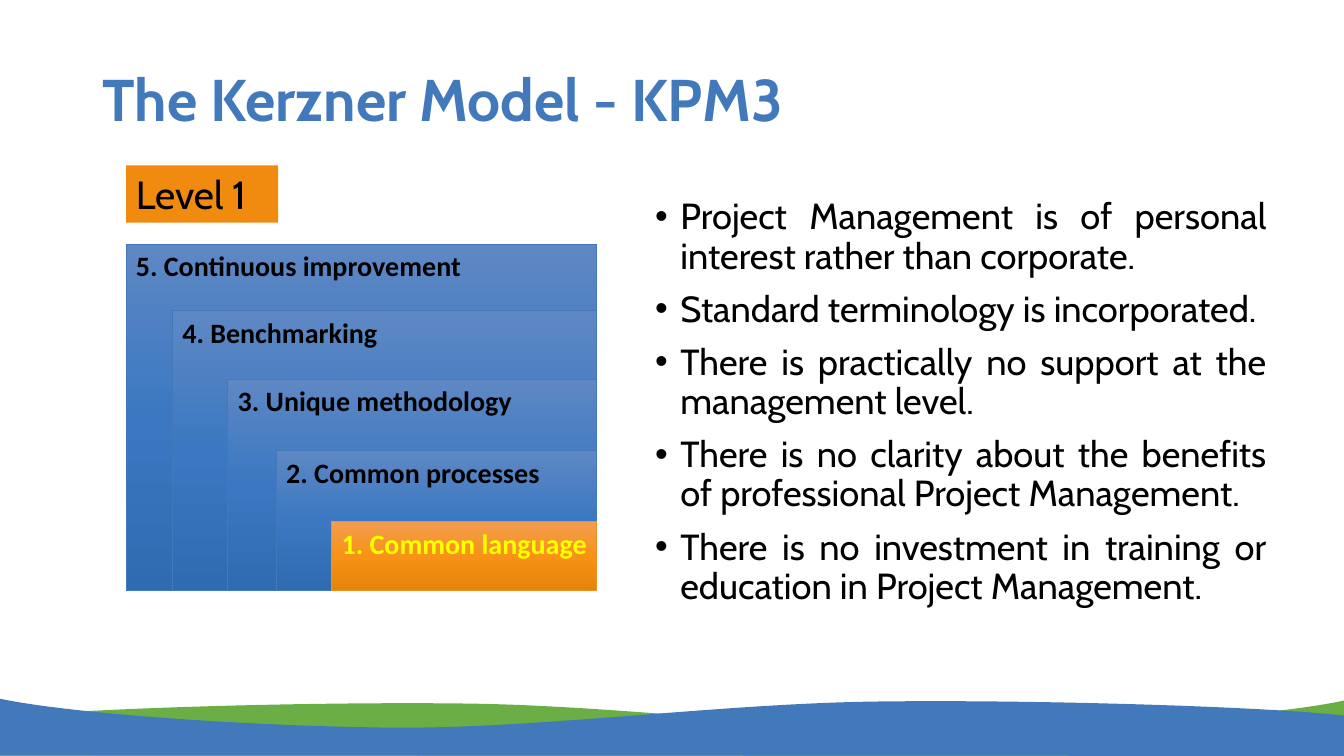
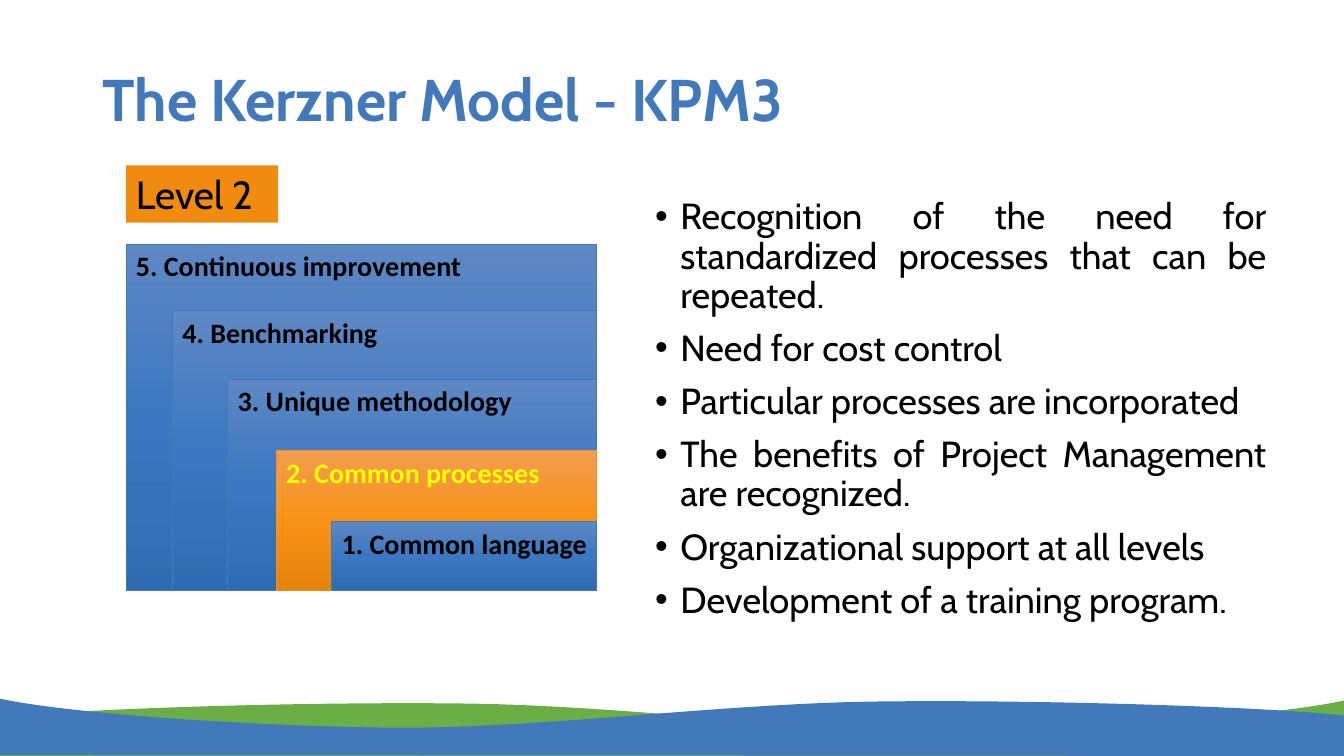
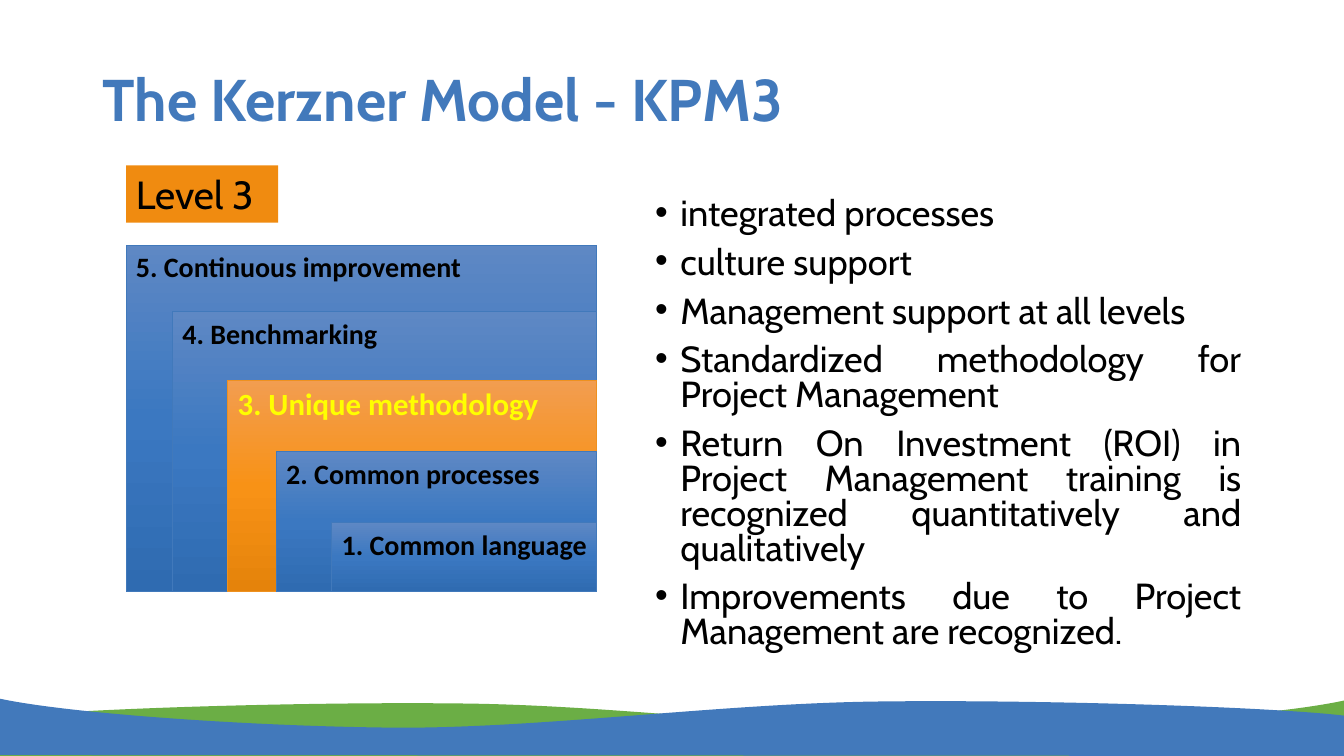
from copy import deepcopy
from dataclasses import dataclass

from lxml import etree
from pptx import Presentation
from pptx.dml.color import RGBColor
from pptx.enum.shapes import MSO_SHAPE
from pptx.enum.text import MSO_ANCHOR, MSO_AUTO_SIZE, PP_ALIGN
from pptx.oxml.ns import qn
from pptx.util import Inches, Pt

RECTANGLE = MSO_SHAPE.RECTANGLE
TOP, MIDDLE = MSO_ANCHOR.TOP, MSO_ANCHOR.MIDDLE
LEFT, JUSTIFY = PP_ALIGN.LEFT, PP_ALIGN.JUSTIFY
FIT_SHAPE = MSO_AUTO_SIZE.SHAPE_TO_FIT_TEXT

COLOURS = {
    "blue": "4279BB",
    "green": "6BAE45",
    "orange": "F08B10",
    "black": "000000",
    "yellow": "FFFF00",
    "plain line": "4179BB",
    "plain top": "5E88C4",
    "plain middle": "3B78C1",
    "plain bottom": "2F6BB1",
    "highlight line": "EE9120",
    "highlight top": "F29D50",
    "highlight middle": "F89216",
    "highlight bottom": "E5830B",
}
HEADING_FONT = "Cabin"
LEVEL_FONT = "Calibri"
TITLE = "The Kerzner Model - KPM3"

LEVELS_RIGHT = 5.92
LEVELS_BOTTOM = 5.86

Point = tuple[float, float]


@dataclass(frozen=True)
class Wave:
    """A crest of cubic curves (three points each), closed by a curve and a line."""
    colour: str
    start: Point
    crest: list[Point]
    first_side: list[Point]
    base_end: Point
    last_side: list[Point]


@dataclass(frozen=True)
class Level:
    number: int
    name: str
    left: float
    top: float


@dataclass(frozen=True)
class LevelStyle:
    name: str
    text: str


@dataclass(frozen=True)
class LevelPage:
    number: int
    points: list[str]
    body_width: float = 6.26
    line_spacing: float = 0.9
    highlight_size: int = 20
    levels_shift: float = 0.0


WAVES = [
    Wave("green", (-0.01, 7.12), [
        (0.76, 7.03), (3.06, 6.96), (4.62, 6.98),
        (6.18, 7.0), (7.89, 7.24), (9.35, 7.24),
        (10.8, 7.23), (12.65, 7.1), (13.33, 6.95),
    ], [(13.33, 7.19), (13.33, 7.27), (13.34, 7.5)],
        (0, 7.52), [(-0.01, 7.27), (-0.01, 7.26), (-0.01, 7.12)]),
    Wave("blue", (13.33, 7.1), [
        (12.56, 7.01), (10.26, 6.94), (8.7, 6.96),
        (7.15, 6.98), (5.43, 7.22), (3.98, 7.22),
        (2.53, 7.21), (0.68, 7.08), (-0.01, 6.93),
    ], [(-0.01, 7.17), (-0.01, 7.26), (-0.01, 7.49)],
        (13.33, 7.5), [(13.33, 7.25), (13.33, 7.24), (13.33, 7.1)]),
]

LEVELS = [
    Level(5, "Continuous improvement", 1.25, 2.42),
    Level(4, "Benchmarking", 1.71, 3.08),
    Level(3, "Unique methodology", 2.26, 3.76),
    Level(2, "Common processes", 2.74, 4.47),
    Level(1, "Common language", 3.29, 5.17),
]

PLAIN = LevelStyle("plain", COLOURS["black"])
HIGHLIGHT = LevelStyle("highlight", COLOURS["yellow"])

PAGES = [
    LevelPage(1, [
        "Project Management is of personal interest rather than corporate.",
        "Standard terminology is incorporated.",
        "There is practically no support at the management level.",
        "There is no clarity about the benefits of professional Project Management.",
        "There is no investment in training or education in Project Management.",
    ]),
    LevelPage(2, [
        "Recognition of the need for standardized processes that can be repeated.",
        "Need for cost control",
        "Particular processes are incorporated",
        "The benefits of Project Management are recognized.",
        "Organizational support at all levels",
        "Development of a training program.",
    ]),
    LevelPage(3, [
        "integrated processes",
        "culture support",
        "Management support at all levels",
        "Standardized methodology for Project Management",
        "Return On Investment (ROI) in Project Management training is recognized "
        "quantitatively and qualitatively",
        "Improvements due to Project Management are recognized.",
    ], body_width=6.01, line_spacing=0.8, highlight_size=22, levels_shift=0.01),
]


def rgb(value: str) -> RGBColor:
    return RGBColor.from_string(value)


def style_paragraph(para, text: str, font: str, size: float, colour: str,
                    bold: bool = False, align=LEFT) -> None:
    para.text = text
    para.alignment = align
    para.font.name = font
    para.font.size = Pt(size)
    para.font.bold = bold
    para.font.color.rgb = rgb(colour)


def bend_segments(segments: list) -> None:
    """Turn each three straight segments into one cubic curve."""
    for index in range(0, len(segments), 3):
        group = segments[index:index + 3]
        curve = etree.Element(qn("a:cubicBezTo"))
        group[0].addprevious(curve)
        for segment in group:
            curve.append(segment[0])
            segment.getparent().remove(segment)


def draw_wave(page, wave: Wave) -> None:
    before_base = wave.crest + wave.first_side
    outline = [wave.start, *before_base, wave.base_end, *wave.last_side]
    vertices = [(Inches(x), Inches(y)) for x, y in outline]
    builder = page.shapes.build_freeform(*vertices[0])
    builder.add_line_segments(vertices[1:], close=True)
    shape = builder.convert_to_shape()
    segments = list(shape._element.iter(qn("a:lnTo")))
    base = len(before_base)
    bend_segments(segments[:base])
    bend_segments(segments[base + 1:base + 1 + len(wave.last_side)])
    shape.shadow.inherit = False
    shape.fill.solid()
    shape.fill.fore_color.rgb = rgb(COLOURS[wave.colour])
    shape.line.fill.background()


def draw_title(page) -> None:
    box = page.shapes.add_textbox(Inches(0.92), Inches(0.29), Inches(11.5), Inches(1.45))
    box.text_frame.word_wrap = True
    box.text_frame.vertical_anchor = MIDDLE
    para = box.text_frame.paragraphs[0]
    style_paragraph(para, TITLE, HEADING_FONT, 42, COLOURS["blue"], bold=True)
    para.line_spacing = 0.9


def add_bullet(para) -> None:
    properties = para._p.get_or_add_pPr()
    properties.set("marL", str(Inches(0.25)))
    properties.set("indent", str(-Inches(0.25)))
    run_defaults = properties.find(qn("a:defRPr"))
    run_defaults.addprevious(etree.Element(qn("a:buFont"), typeface="Arial"))
    run_defaults.addprevious(etree.Element(qn("a:buChar"), char="•"))


def draw_body(page, content: LevelPage) -> None:
    box = page.shapes.add_textbox(Inches(6.4), Inches(1.92),
                                  Inches(content.body_width), Inches(4.89))
    frame = box.text_frame
    frame.word_wrap = True
    for index, point in enumerate(content.points):
        para = frame.add_paragraph() if index else frame.paragraphs[0]
        style_paragraph(para, point, HEADING_FONT, 25.9, COLOURS["black"], align=JUSTIFY)
        para.line_spacing = content.line_spacing
        para.space_before = Pt(10)
        add_bullet(para)


def add_rectangle(page, left: float, top: float, width: float, height: float):
    shape = page.shapes.add_shape(RECTANGLE, Inches(left), Inches(top),
                                  Inches(width), Inches(height))
    shape.shadow.inherit = False
    shape.text_frame.word_wrap = True
    shape.text_frame.vertical_anchor = TOP
    return shape


def draw_level_tag(page, number: int) -> None:
    tag = add_rectangle(page, 1.25, 1.64, 1.51, 0.57)
    tag.fill.solid()
    tag.fill.fore_color.rgb = rgb(COLOURS["orange"])
    tag.line.fill.background()
    tag.text_frame.auto_size = FIT_SHAPE
    style_paragraph(tag.text_frame.paragraphs[0], f"Level {number}",
                    HEADING_FONT, 28, COLOURS["black"])


def fill_gradient(shape, style_name: str) -> None:
    """Fill from top to bottom with the style's three evenly spaced colours."""
    shape.fill.gradient()
    shape.fill.gradient_angle = 270
    stop_list = shape._element.spPr.find(qn("a:gradFill")).find(qn("a:gsLst"))
    stop_list.append(deepcopy(stop_list[-1]))
    parts = ("top", "middle", "bottom")
    for index, (stop, part) in enumerate(zip(shape.fill.gradient_stops, parts)):
        stop.color.rgb = rgb(COLOURS[f"{style_name} {part}"])
        stop.position = index / 2


def draw_level(page, level: Level, style: LevelStyle, size: int, shift: float) -> None:
    shape = add_rectangle(page, level.left, level.top + shift,
                          LEVELS_RIGHT - level.left, LEVELS_BOTTOM - level.top)
    fill_gradient(shape, style.name)
    shape.line.color.rgb = rgb(COLOURS[f"{style.name} line"])
    shape.line.width = Pt(0.5)
    style_paragraph(shape.text_frame.paragraphs[0], f"{level.number}. {level.name}",
                    LEVEL_FONT, size, style.text, bold=True)


def draw_page(page, content: LevelPage) -> None:
    for wave in WAVES:
        draw_wave(page, wave)
    draw_title(page)
    draw_body(page, content)
    draw_level_tag(page, content.number)
    for level in LEVELS:
        current = level.number == content.number
        draw_level(page, level, HIGHLIGHT if current else PLAIN,
                   content.highlight_size if current else 20, content.levels_shift)


def main() -> None:
    deck = Presentation()
    deck.slide_width = Inches(13.33)
    deck.slide_height = Inches(7.5)
    blank_layout = deck.slide_layouts[6]
    for content in PAGES:
        draw_page(deck.slides.add_slide(blank_layout), content)
    deck.save("out.pptx")


if __name__ == "__main__":
    main()
